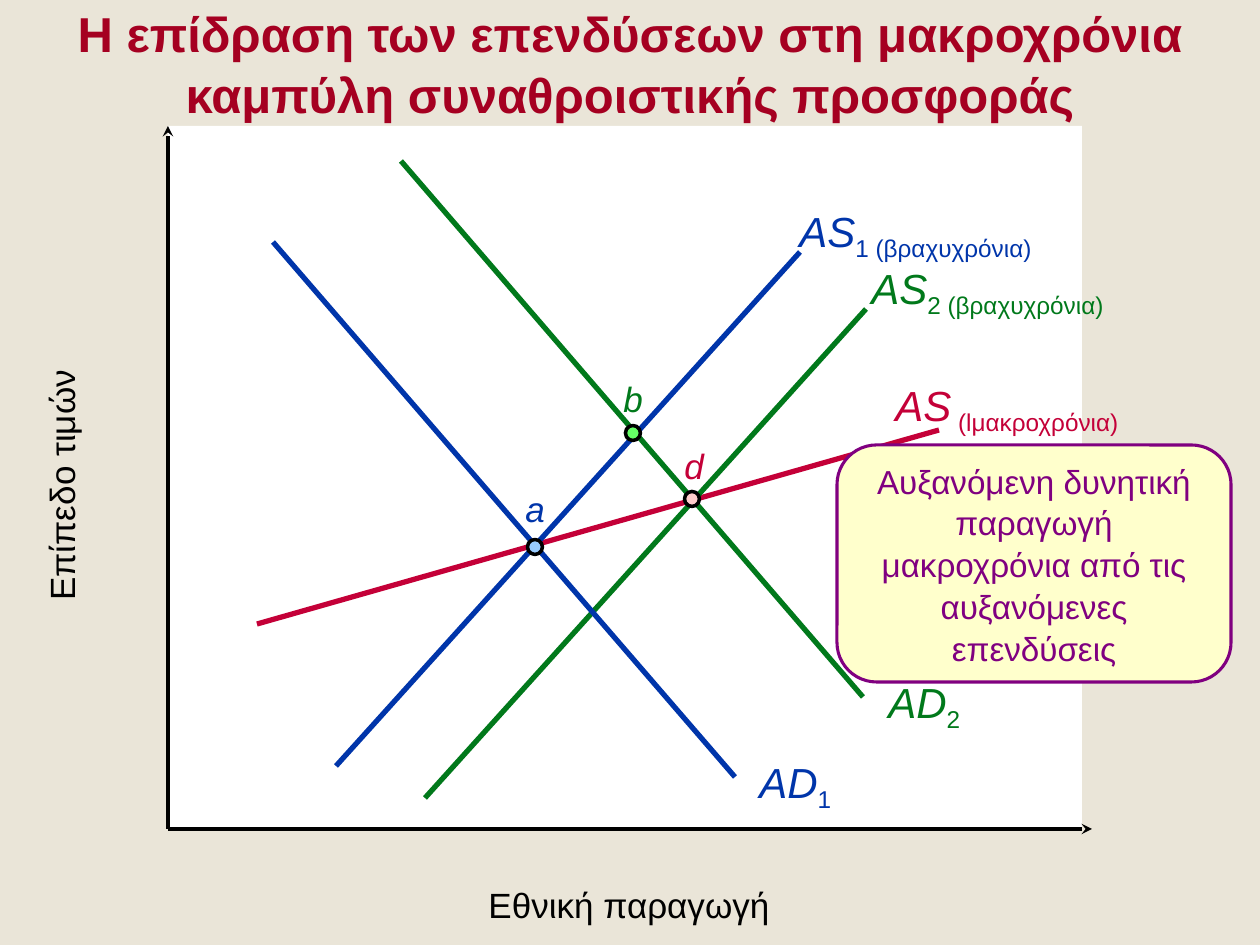
from lxml import etree
from pptx import Presentation
from pptx.dml.color import RGBColor
from pptx.enum.shapes import MSO_CONNECTOR, MSO_SHAPE
from pptx.enum.text import MSO_ANCHOR, MSO_AUTO_SIZE, PP_ALIGN
from pptx.oxml.ns import qn
from pptx.util import Pt

STRAIGHT = MSO_CONNECTOR.STRAIGHT
RECT, OVAL, ROUNDED = MSO_SHAPE.RECTANGLE, MSO_SHAPE.OVAL, MSO_SHAPE.ROUNDED_RECTANGLE
CENTER, LEFT = PP_ALIGN.CENTER, PP_ALIGN.LEFT
MIDDLE, TOP = MSO_ANCHOR.MIDDLE, MSO_ANCHOR.TOP
TITLE_ONLY = 5
EMU_PER_PX = 914400 / 126
FONT = "Arial"

COLORS = {
    "background": "EAE5D8", "white": "FFFFFF", "black": "000000",
    "blue": "0035AA", "green": "01791B", "red": "C40038",
    "title": "A50021", "purple": "800080", "cream": "FFFFCC",
    "light blue": "99CCFF", "light green": "66FF66", "pink": "FFCCCC",
}

TITLE = "Η επίδραση των επενδύσεων στη μακροχρόνια καμπύλη συναθροιστικής προσφοράς"
CALLOUT = "Αυξανόμενη δυνητική παραγωγή μακροχρόνια από τις αυξανόμενες επενδύσεις"
TITLE_AREA = (0, -6, 1260, 131)
PLOT_AREA = (168, 126, 914, 703)
CALLOUT_AREA = (837, 445, 394, 237)

# start, end
AXES = [((168, 829), (168, 126)), ((168, 829), (1092, 829))]

# colour, start, end, name, subscript, label area
CURVES = [
    ("red", (257, 624), (939, 430), "AS", " (lμακροχρόνια)", (883, 373, 276, 64)),
    ("green", (425, 798), (866, 309), "AS", "2 (βραχυχρόνια)", (859, 256, 287, 64)),
    ("blue", (273, 242), (735, 777), "AD", "1", (747, 750, 100, 63)),
    ("blue", (336, 766), (800, 252), "AS", "1 (βραχυχρόνια)", (787, 199, 287, 64)),
    ("green", (401, 161), (863, 697), "AD", "2", (876, 670, 100, 63)),
]

# text, area, rotation
AXIS_LABELS = [
    ("Επίπεδο τιμών", (-72, 452, 267, 55), 270),
    ("Εθνική παραγωγή", (476, 877, 309, 55), 0),
]

# name, text colour, fill, centre, label corner
POINTS = [
    ("a", "blue", "light blue", (535, 547), (513, 481)),
    ("b", "green", "light green", (633, 433), (611, 371)),
    ("d", "red", "pink", (692, 499), (672, 438)),
]
DOT = 15
POINT_LABEL = (45, 54)


def px(*values):
    return [round(value * EMU_PER_PX) for value in values]


def rgb(name):
    return RGBColor.from_string(COLORS[name])


def add_span(para, text, size, color, bold=False, italic=False, subscript=False):
    span = para.add_run()
    span.text = text
    font = span.font
    font.name, font.size, font.bold, font.italic = FONT, Pt(size), bold, italic
    font.color.rgb = rgb(color)
    if subscript:
        span._r.get_or_add_rPr().set("baseline", "-25000")
    return span


def set_frame(frame, wrap, anchor=TOP, align=LEFT):
    """Apply the common margins and return the first paragraph."""
    frame.word_wrap = wrap
    frame.auto_size = MSO_AUTO_SIZE.NONE
    frame.vertical_anchor = anchor
    frame.margin_left = frame.margin_right = Pt(7.2)
    frame.margin_top = frame.margin_bottom = Pt(3.6)
    para = frame.paragraphs[0]
    para.alignment = align
    return para


def add_label(page, area, rotation=0):
    box = page.shapes.add_textbox(*px(*area))
    box.rotation = rotation
    return set_frame(box.text_frame, wrap=False)


def add_panel(page, kind, area, fill, line=None, width=2):
    panel = page.shapes.add_shape(kind, *px(*area))
    panel.shadow.inherit = False
    panel.fill.solid()
    panel.fill.fore_color.rgb = rgb(fill)
    if line:
        panel.line.color.rgb = rgb(line)
        panel.line.width = Pt(width)
    else:
        panel.line.fill.background()
    return panel


def add_line(page, start, end, color, width, arrow=False):
    line = page.shapes.add_connector(STRAIGHT, *px(*start, *end))
    line.line.color.rgb = rgb(color)
    line.line.width = Pt(width)
    if arrow:
        etree.SubElement(line.line._get_or_add_ln(), qn("a:tailEnd"), type="stealth")
    etree.SubElement(line._element.spPr, qn("a:effectLst"))


def add_text_shadow(span):
    fill = span._r.get_or_add_rPr().find(qn("a:solidFill"))
    effects = etree.Element(qn("a:effectLst"))
    shadow = etree.SubElement(effects, qn("a:outerShdw"), dist="35921", dir="2700000")
    etree.SubElement(shadow, qn("a:srgbClr"), val=COLORS["black"])
    fill.addnext(effects)


def add_title(page):
    title = page.shapes.title
    title.left, title.top, title.width, title.height = px(*TITLE_AREA)
    para = set_frame(title.text_frame, True, TOP, CENTER)
    para.line_spacing = 1.05
    add_text_shadow(add_span(para, TITLE, 28, "title", bold=True))


def add_callout(page):
    callout = add_panel(page, ROUNDED, CALLOUT_AREA, "cream", "purple", 1.75)
    callout.adjustments[0] = 0.167
    para = set_frame(callout.text_frame, True, MIDDLE, CENTER)
    para.line_spacing = 1.05
    add_span(para, CALLOUT, 19, "purple")


def main():
    deck = Presentation()
    deck.slide_width, deck.slide_height = px(1260, 945)
    page = deck.slides.add_slide(deck.slide_layouts[TITLE_ONLY])
    page.background.fill.solid()
    page.background.fill.fore_color.rgb = rgb("background")

    add_title(page)
    add_panel(page, RECT, PLOT_AREA, "white")
    for start, end in AXES:
        add_line(page, start, end, "black", 2, arrow=True)
    for color, start, end, name, subscript, area in CURVES:
        add_line(page, start, end, color, 3)
        para = add_label(page, area)
        add_span(para, name, 24, color, italic=True)
        add_span(para, subscript, 24, color, subscript=True)
    for text, area, rotation in AXIS_LABELS:
        add_span(add_label(page, area, rotation), text, 20, "black")
    for name, color, fill, (x, y), corner in POINTS:
        add_panel(page, OVAL, (x - DOT / 2, y - DOT / 2, DOT, DOT), fill, "black")
        para = add_label(page, (*corner, *POINT_LABEL))
        add_span(para, name, 20, color, italic=True)
    add_callout(page)
    deck.save("out.pptx")


if __name__ == "__main__":
    main()
